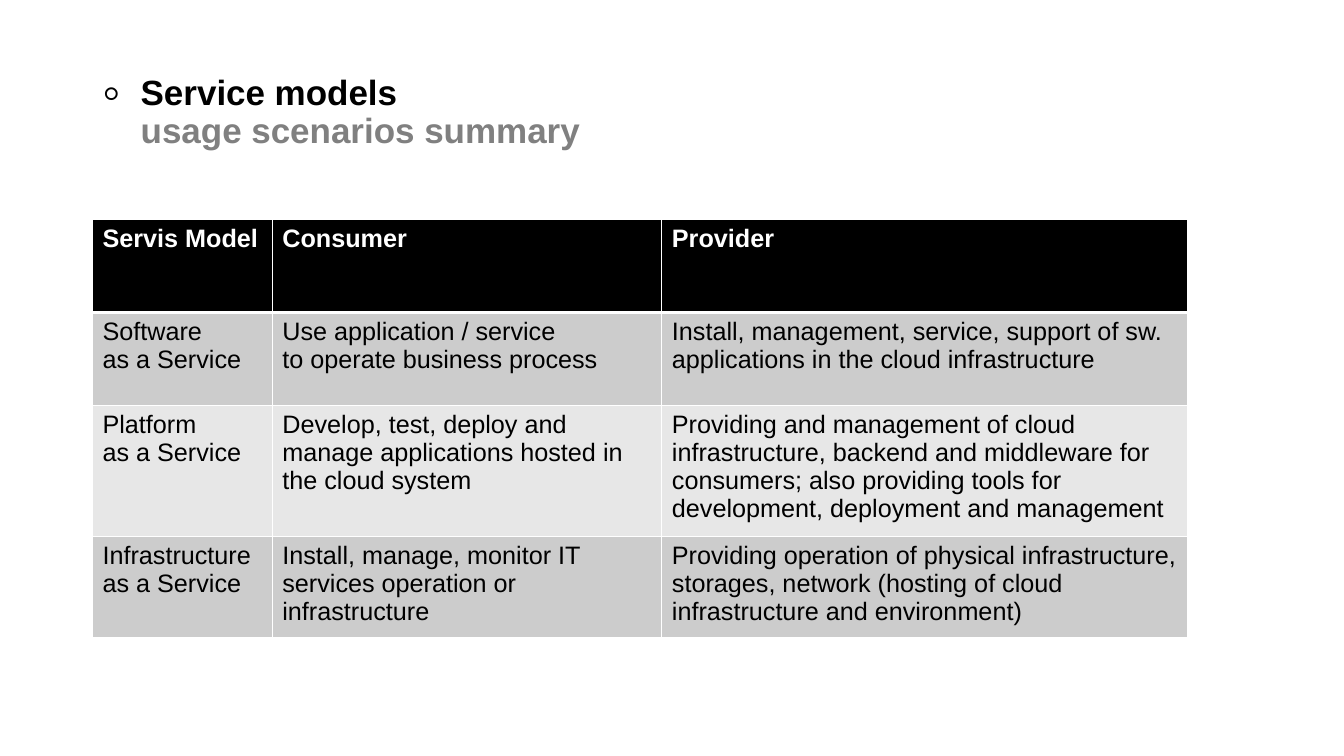
import pptx
import pptx.dml.color
import pptx.enum.text
import pptx.util
from lxml import etree
from pptx.oxml import ns

RGBColor = pptx.dml.color.RGBColor
BLACK = RGBColor(0x00, 0x00, 0x00)
WHITE = RGBColor(0xFF, 0xFF, 0xFF)
GRAY = RGBColor(0x80, 0x80, 0x80)
DARK_BAND = RGBColor(0xCC, 0xCC, 0xCC)
LIGHT_BAND = RGBColor(0xE7, 0xE7, 0xE7)

FONT = "Arial"
SLIDE_WIDTH = pptx.util.Inches(13.333)
SLIDE_HEIGHT = pptx.util.Inches(7.5)
LEFT = 0.0688
COLUMN_SHARES = (0.1338, 0.2899, 0.391)
ROW_SHARE = 0.1228

MODELS = (
    ("Servis Model", "Consumer", "Provider"),
    (
        "Software\nas a Service",
        "Use application / service\nto operate business process",
        "Install, management, service, support of sw. "
        "applications in the cloud infrastructure",
    ),
    (
        "Platform\nas a Service",
        "Develop, test, deploy and manage applications hosted in the cloud system",
        "Providing and management of cloud infrastructure, backend and middleware "
        "for consumers; also providing tools for development, deployment and management",
    ),
    (
        "Infrastructure\nas a Service",
        "Install, manage, monitor IT services operation or infrastructure",
        "Providing operation of physical infrastructure, storages, network "
        "(hosting of cloud infrastructure and environment)",
    ),
)


def across(share):
    return round(SLIDE_WIDTH * share)


def down(share):
    return round(SLIDE_HEIGHT * share)


def add_text(paragraph, text, *, size, color, bold=False):
    run = paragraph.add_run()
    run.text = text
    run.font.name = FONT
    run.font.size = pptx.util.Pt(size)
    run.font.bold = bold
    run.font.color.rgb = color


def add_bullet(paragraph, character, size_percent, indent):
    properties = paragraph._p.get_or_add_pPr()
    properties.set("marL", str(indent))
    properties.set("indent", str(-indent))
    size = etree.SubElement(properties, ns.qn("a:buSzPct"))
    size.set("val", str(size_percent * 1000))
    font = etree.SubElement(properties, ns.qn("a:buFont"))
    font.set("typeface", FONT)
    bullet = etree.SubElement(properties, ns.qn("a:buChar"))
    bullet.set("char", character)


def add_title(slide):
    shape = slide.shapes.add_textbox(
        across(LEFT), down(0.0533), across(0.8625), down(0.1933)
    )
    frame = shape.text_frame
    frame.word_wrap = True
    frame.vertical_anchor = pptx.enum.text.MSO_ANCHOR.MIDDLE
    paragraph = frame.paragraphs[0]
    add_bullet(paragraph, "◦", 150, pptx.util.Inches(0.38))
    paragraph.line_spacing = 0.9
    add_text(paragraph, "Service models", size=25, color=BLACK, bold=True)
    paragraph.add_line_break()
    add_text(paragraph, "usage scenarios summary", size=25, color=GRAY, bold=True)


def set_borders(cell, widths):
    properties = cell._tc.get_or_add_tcPr()
    for side, width in widths.items():
        line = etree.SubElement(properties, ns.qn(f"a:ln{side}"))
        line.set("w", str(pptx.util.Pt(width)))
        fill = etree.SubElement(line, ns.qn("a:solidFill"))
        color = etree.SubElement(fill, ns.qn("a:srgbClr"))
        color.set("val", str(WHITE))


def fill_cell(cell, text, row):
    header = row == 0
    set_borders(
        cell,
        {"L": 1, "R": 1, "T": 3 if row == 1 else 1, "B": 3 if header else 1},
    )
    cell.fill.solid()
    if header:
        cell.fill.fore_color.rgb = BLACK
    else:
        cell.fill.fore_color.rgb = DARK_BAND if row % 2 else LIGHT_BAND
    frame = cell.text_frame
    for index, line in enumerate(text.split("\n")):
        paragraph = frame.add_paragraph() if index else frame.paragraphs[0]
        add_text(
            paragraph, line, size=18, color=WHITE if header else BLACK, bold=header
        )


def add_models_table(slide):
    table = slide.shapes.add_table(
        len(MODELS),
        len(COLUMN_SHARES),
        across(LEFT),
        down(0.2907),
        across(sum(COLUMN_SHARES)),
        down(ROW_SHARE * len(MODELS)),
    ).table
    for column, share in zip(table.columns, COLUMN_SHARES):
        column.width = across(share)
    for row, texts in enumerate(MODELS):
        for column, text in enumerate(texts):
            fill_cell(table.cell(row, column), text, row)


def main():
    presentation = pptx.Presentation()
    presentation.slide_width = SLIDE_WIDTH
    presentation.slide_height = SLIDE_HEIGHT
    slide = presentation.slides.add_slide(presentation.slide_layouts[6])
    add_title(slide)
    add_models_table(slide)
    presentation.save("out.pptx")


if __name__ == "__main__":
    main()
